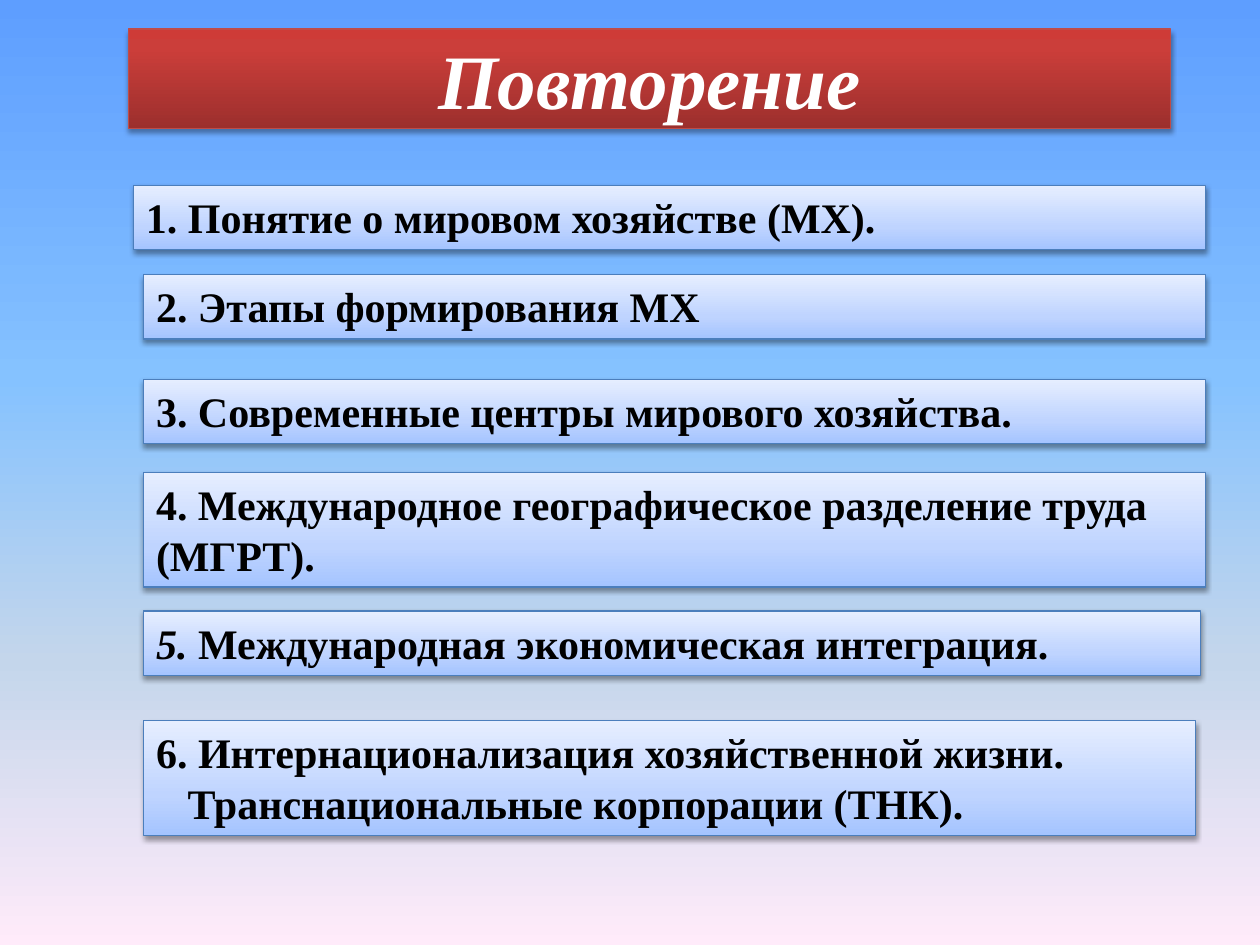
import lxml.etree
import pptx
import pptx.dml.color
import pptx.enum.text
import pptx.oxml
import pptx.oxml.ns
import pptx.util
from pptx.dml.color import RGBColor
from pptx.util import Inches

FONT = "Times New Roman"
WHITE = RGBColor(0xFF, 0xFF, 0xFF)
BLACK = RGBColor(0x00, 0x00, 0x00)
BLUE_LINE = RGBColor(0x4B, 0x7E, 0xBC)
RED_LINE = RGBColor(0xBF, 0x4C, 0x48)

# Gradient stops: position in percent, colour
SKY = [(0, RGBColor(0x5E, 0x9E, 0xFF)), (40, RGBColor(0x85, 0xC2, 0xFF)),
       (70, RGBColor(0xC4, 0xD6, 0xEB)), (100, RGBColor(0xFF, 0xEB, 0xFA))]
PALE_BLUE = [(0, RGBColor(0xA4, 0xC4, 0xFF)), (35, RGBColor(0xBF, 0xD4, 0xFF)),
             (100, RGBColor(0xE6, 0xEE, 0xFF))]
RED = [(0, RGBColor(0x9C, 0x2F, 0x2D)), (80, RGBColor(0xCB, 0x3E, 0x3A)),
       (100, RGBColor(0xCE, 0x3B, 0x37))]

LEFT = 1.14
ONE_LINE, TWO_LINES = 0.51, 0.91
# Topics: left, top, width, height, paragraphs
TOPICS = [
    (1.06, 1.47, 8.51, ONE_LINE, ["1. Понятие о мировом хозяйстве (МХ)."]),
    (LEFT, 2.18, 8.43, ONE_LINE, ["2. Этапы формирования МХ"]),
    (LEFT, 3.01, 8.43, ONE_LINE, ["3. Современные центры мирового хозяйства."]),
    (LEFT, 3.75, 8.43, TWO_LINES,
     ["4. Международное географическое разделение труда (МГРТ)."]),
    (LEFT, 4.85, 8.39, ONE_LINE, ["5. Международная экономическая интеграция."]),
    (LEFT, 5.72, 8.35, TWO_LINES,
     ["6. Интернационализация хозяйственной жизни.",
      "Транснациональные корпорации (ТНК)."]),
]
ITALIC_NUMBER = "5. "


def set_gradient(fill, properties, stops, angle):
    """Fill with several stops; the angle runs clockwise in degrees."""
    fill.background()
    stop_xml = "".join(
        f'<a:gs pos="{position * 1000}"><a:srgbClr val="{color}"/></a:gs>'
        for position, color in stops)
    gradient = pptx.oxml.parse_xml(
        f'<a:gradFill {pptx.oxml.ns.nsdecls("a")} rotWithShape="1">'
        f'<a:gsLst>{stop_xml}</a:gsLst>'
        f'<a:lin ang="{angle * 60000}" scaled="0"/></a:gradFill>')
    empty_fill = properties.find(pptx.oxml.ns.qn("a:noFill"))
    properties.replace(empty_fill, gradient)


def set_shadow(shape, opacity, distance):
    shape.shadow.inherit = False
    effects = shape.element.spPr.find(pptx.oxml.ns.qn("a:effectLst"))
    effects.append(pptx.oxml.parse_xml(
        f'<a:outerShdw {pptx.oxml.ns.nsdecls("a")} blurRad="{pptx.util.Pt(3.1)}" '
        f'dist="{pptx.util.Pt(distance)}" dir="5400000" rotWithShape="0">'
        f'<a:srgbClr val="{BLACK}"><a:alpha val="{opacity * 1000}"/></a:srgbClr>'
        '</a:outerShdw>'))


def style_panel(shape, stops, line_color, opacity, distance):
    set_gradient(shape.fill, shape.element.spPr, stops, 270)
    shape.line.color.rgb = line_color
    shape.line.width = pptx.util.Pt(0.75)
    set_shadow(shape, opacity, distance)


def style_text(paragraph, size, color):
    paragraph.font.name = FONT
    paragraph.font.size = pptx.util.Pt(size)
    paragraph.font.bold = True
    paragraph.font.color.rgb = color


def format_title(title):
    title.left, title.top = Inches(1.02), Inches(0.23)
    title.width, title.height = Inches(8.27), Inches(0.79)
    # Rounded outline for the placeholder
    title.element.spPr.find(pptx.oxml.ns.qn("a:xfrm")).addnext(pptx.oxml.parse_xml(
        f'<a:prstGeom {pptx.oxml.ns.nsdecls("a")} prst="roundRect"><a:avLst>'
        '<a:gd name="adj" fmla="val 16667"/></a:avLst></a:prstGeom>'))
    style_panel(title, RED, RED_LINE, 35, 1.8)
    frame = title.text_frame
    frame.text = "Повторение"
    frame.word_wrap = False
    frame.auto_size = pptx.enum.text.MSO_AUTO_SIZE.NONE
    frame.vertical_anchor = pptx.enum.text.MSO_ANCHOR.MIDDLE
    paragraph = frame.paragraphs[0]
    paragraph.alignment = pptx.enum.text.PP_ALIGN.CENTER
    style_text(paragraph, 44, WHITE)
    paragraph.font.italic = True


def add_topic(slide, left, top, width, height, lines):
    box = slide.shapes.add_textbox(
        Inches(left), Inches(top), Inches(width), Inches(height))
    style_panel(box, PALE_BLUE, BLUE_LINE, 38, 1.6)
    frame = box.text_frame
    frame.word_wrap = True
    frame.auto_size = pptx.enum.text.MSO_AUTO_SIZE.SHAPE_TO_FIT_TEXT
    for index, line in enumerate(lines):
        paragraph = frame.add_paragraph() if index else frame.paragraphs[0]
        style_text(paragraph, 24, BLACK)
        if index:
            # Indent the continuation under the topic's wording
            paragraph._p.get_or_add_pPr().set("marL", str(Inches(0.25)))
        if line.startswith(ITALIC_NUMBER):
            number = paragraph.add_run()
            number.text = ITALIC_NUMBER
            number.font.italic = True
            line = line.removeprefix(ITALIC_NUMBER)
        paragraph.add_run().text = line


def main():
    presentation = pptx.Presentation()
    presentation.slide_width = Inches(10)
    presentation.slide_height = Inches(7.5)
    slide = presentation.slides.add_slide(presentation.slide_layouts[5])

    # Background
    background_fill = slide.background.fill
    background_properties = slide.element.find(".//" + pptx.oxml.ns.qn("p:bgPr"))
    if background_properties is None:
        background_fill.background()
        background_properties = slide.element.find(".//" + pptx.oxml.ns.qn("p:bgPr"))
    set_gradient(background_fill, background_properties, SKY, 90)

    # Title and topics
    format_title(slide.shapes.title)
    for topic in TOPICS:
        add_topic(slide, *topic)

    presentation.save("out.pptx")


if __name__ == "__main__":
    main()
